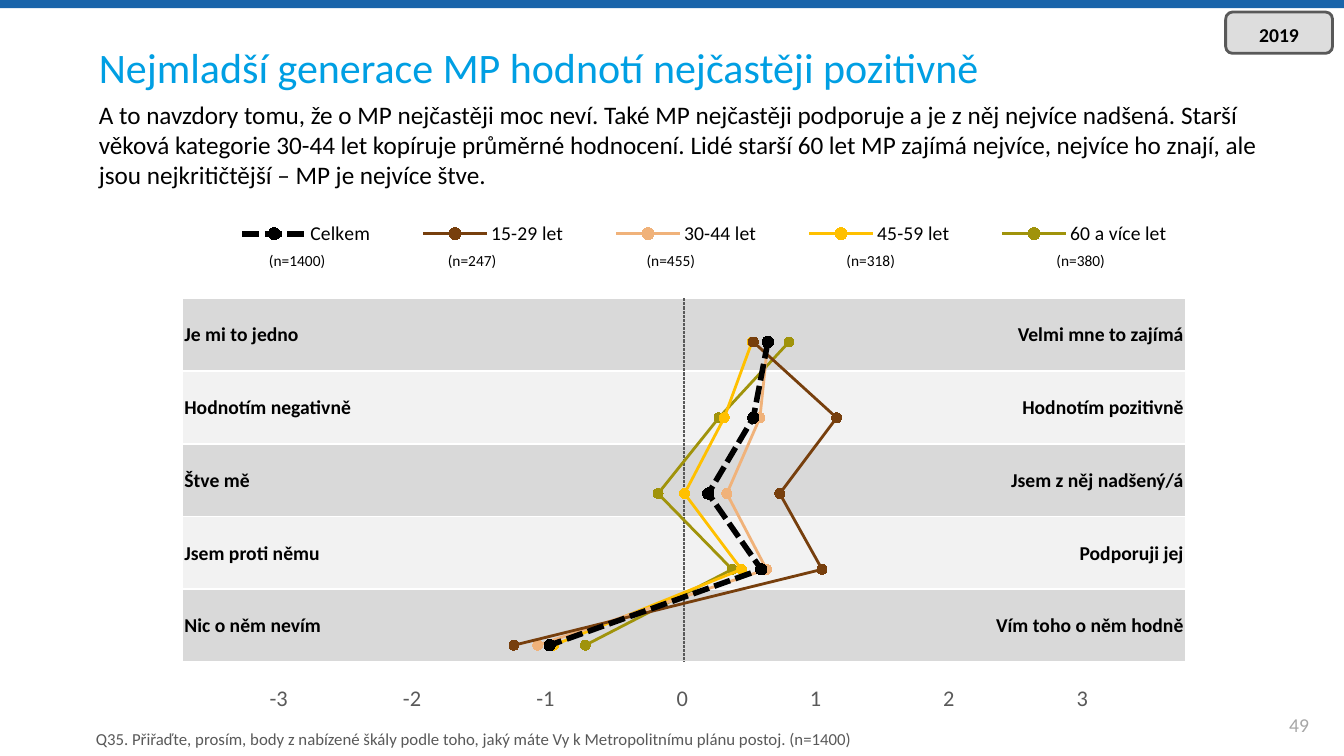
from lxml import etree
from pptx import Presentation
from pptx.chart.data import XyChartData
from pptx.dml.color import RGBColor
from pptx.enum.chart import XL_CHART_TYPE, XL_LEGEND_POSITION, XL_MARKER_STYLE
from pptx.enum.dml import MSO_LINE
from pptx.enum.shapes import MSO_CONNECTOR, MSO_SHAPE
from pptx.enum.text import MSO_ANCHOR, MSO_AUTO_SIZE, PP_ALIGN
from pptx.oxml.ns import qn
from pptx.util import Pt

FONT = "Calibri"
NO_TABLE_STYLE = "{2D5ABB26-0587-4C30-8999-92F81FD0307C}"
BLACK = RGBColor(0x00, 0x00, 0x00)
WHITE = RGBColor(0xFF, 0xFF, 0xFF)
BAR_BLUE = RGBColor(0x19, 0x64, 0xAA)
TITLE_BLUE = RGBColor(0x00, 0x9F, 0xE3)
DARK_GREY = RGBColor(0x59, 0x59, 0x59)
PAGE_GREY = RGBColor(0xA6, 0xA6, 0xA6)
BAND_DARK = RGBColor(0xD9, 0xD9, 0xD9)
BAND_LIGHT = RGBColor(0xF2, 0xF2, 0xF2)
BROWN = RGBColor(0x77, 0x3F, 0x0D)
PEACH = RGBColor(0xF0, 0xB2, 0x7A)
AMBER = RGBColor(0xFF, 0xC0, 0x00)
OLIVE = RGBColor(0xA0, 0x93, 0x0B)

TITLE = "Nejmladší generace MP hodnotí nejčastěji pozitivně"
COMMENTARY = (
    "A to navzdory tomu, že o MP nejčastěji moc neví. Také MP nejčastěji podporuje "
    "a je z něj nejvíce nadšená. Starší věková kategorie 30-44 let kopíruje průměrné "
    "hodnocení. Lidé starší 60 let MP zajímá nejvíce, nejvíce ho znají, ale jsou "
    "nejkritičtější – MP je nejvíce štve.")
QUESTION = ("Q35. Přiřaďte, prosím, body z nabízené škály podle toho, jaký máte Vy "
            "k Metropolitnímu plánu postoj. (n=1400)")
ATTITUDES = [
    ("Je mi to jedno", "Velmi mne to zajímá"),
    ("Hodnotím negativně", "Hodnotím pozitivně"),
    ("Štve mě", "Jsem z něj nadšený/á"),
    ("Jsem proti němu", "Podporuji jej"),
    ("Nic o něm nevím", "Vím toho o něm hodně"),
]
SCALE = [str(step) for step in range(-3, 4)]
SAMPLE_SIZES = ["(n=1400)", "(n=247)", "(n=455)", "(n=318)", "(n=380)"]
SAMPLE_WIDTHS = [91.5, 158.5, 125.5, 160, 140]
# Name, colour, line width, marker size, mean scores from first to last attitude
AGE_GROUPS = [
    ("Celkem", BLACK, 4, 8, [0.64, 0.53, 0.19, 0.59, -1.01]),
    ("15-29 let", BROWN, 2, 7, [0.53, 1.16, 0.73, 1.05, -1.28]),
    ("30-44 let", PEACH, 2, 7, [0.64, 0.58, 0.33, 0.63, -1.1]),
    ("45-59 let", AMBER, 2, 7, [0.52, 0.31, 0.01, 0.44, -0.98]),
    ("60 a více let", OLIVE, 2, 7, [0.8, 0.27, -0.19, 0.37, -0.74]),
]


def style_font(font, size, color, bold=False):
    font.name, font.size, font.bold = FONT, Pt(size), bold
    font.color.rgb = color


def write(frame, text, size, color, bold=False, align=PP_ALIGN.LEFT):
    paragraph = frame.paragraphs[0]
    paragraph.alignment = align
    paragraph.space_before = Pt(0)
    run = paragraph.add_run()
    run.text = text
    style_font(run.font, size, color, bold)


def set_frame(frame, anchor, left=0, right=0):
    frame.word_wrap = True
    frame.auto_size = MSO_AUTO_SIZE.NONE
    frame.vertical_anchor = anchor
    frame.margin_left, frame.margin_right = Pt(left), Pt(right)
    frame.margin_top = frame.margin_bottom = Pt(0)


def place(shape, left, top, width, height):
    shape.left, shape.top = Pt(left), Pt(top)
    shape.width, shape.height = Pt(width), Pt(height)


def add_label(slide, box, text, size, color, align=PP_ALIGN.LEFT):
    label = slide.shapes.add_textbox(*map(Pt, box))
    set_frame(label.text_frame, MSO_ANCHOR.MIDDLE)
    write(label.text_frame, text, size, color, align=align)


def add_plain_table(slide, left, top, widths, heights):
    frame = slide.shapes.add_table(len(heights), len(widths), Pt(left), Pt(top),
                                   Pt(sum(widths)), Pt(sum(heights)))
    table = frame.table
    table.first_row = table.horz_banding = False
    table._tbl.tblPr.find(qn("a:tableStyleId")).text = NO_TABLE_STYLE
    for column, width in zip(table.columns, widths):
        column.width = Pt(width)
    for row, height in zip(table.rows, heights):
        row.height = Pt(height)
    return table


def fill_cell(cell, text, size, color, align, anchor, bold=False):
    cell.margin_left = cell.margin_right = cell.margin_top = Pt(0.72)
    cell.margin_bottom = Pt(0)
    cell.vertical_anchor = anchor
    cell.fill.background()
    write(cell.text_frame, text, size, color, bold, align)


def add_row_rules(cell):
    properties = cell._tc.get_or_add_tcPr()
    for position, side in enumerate(("a:lnT", "a:lnB")):
        rule = etree.Element(qn(side), w=str(Pt(1.5)))
        fill = etree.SubElement(rule, qn("a:solidFill"))
        etree.SubElement(fill, qn("a:srgbClr"), val=str(WHITE))
        properties.insert(position, rule)


def add_attitudes(slide):
    table = add_plain_table(slide, 131, 213, [357.6] * 2, [52] * 5)
    for row, pair in enumerate(ATTITUDES):
        for column, attitude in enumerate(pair):
            cell = table.cell(row, column)
            align = PP_ALIGN.RIGHT if column else PP_ALIGN.LEFT
            fill_cell(cell, attitude, 14, BLACK, align, MSO_ANCHOR.MIDDLE, True)
            cell.fill.solid()
            cell.fill.fore_color.rgb = BAND_LIGHT if row % 2 else BAND_DARK
            add_row_rules(cell)


def add_row_of_values(slide, left, top, widths, height, values, size, color, align):
    table = add_plain_table(slide, left, top, widths, [height])
    for column, value in enumerate(values):
        fill_cell(table.cell(0, column), value, size, color, align, MSO_ANCHOR.BOTTOM)


def add_zero_line(slide):
    zero_line = slide.shapes.add_connector(
        MSO_CONNECTOR.STRAIGHT, Pt(488.6), Pt(213), Pt(488.6), Pt(473))
    zero_line.line.color.rgb = DARK_GREY
    zero_line.line.width = Pt(0.75)
    zero_line.line.dash_style = MSO_LINE.SQUARE_DOT
    etree.SubElement(zero_line._element.spPr, qn("a:effectLst"))


def add_year_badge(slide):
    badge = slide.shapes.add_shape(
        MSO_SHAPE.ROUNDED_RECTANGLE, Pt(875.5), Pt(8.6), Pt(76.3), Pt(29.5))
    badge.shadow.inherit = False
    badge.fill.solid()
    badge.fill.fore_color.rgb = DARK_GREY
    tint = badge._element.spPr.find(qn("a:solidFill")).find(qn("a:srgbClr"))
    etree.SubElement(tint, qn("a:alpha"), val="20000")
    badge.line.color.rgb = DARK_GREY
    badge.line.width = Pt(2)
    set_frame(badge.text_frame, MSO_ANCHOR.MIDDLE)
    badge.text_frame.margin_top = Pt(3)
    write(badge.text_frame, "2019", 14, BLACK, True, PP_ALIGN.CENTER)


def manual_layout(x, y, w, h, inner=False):
    layout = etree.Element(qn("c:layout"))
    manual = etree.SubElement(layout, qn("c:manualLayout"))
    settings = [("layoutTarget", "inner")] if inner else []
    settings += [("xMode", "edge"), ("yMode", "edge"),
                 ("x", x), ("y", y), ("w", w), ("h", h)]
    for tag, value in settings:
        etree.SubElement(manual, qn("c:" + tag), val=str(value))
    return layout


def drop_layout(element):
    for layout in element.findall(qn("c:layout")):
        element.remove(layout)


def add_profile_chart(slide):
    data = XyChartData()
    for name, _, _, _, scores in AGE_GROUPS:
        group = data.add_series(name)
        for row, score in enumerate(scores):
            group.add_data_point(score, 20 * (row + 1))
    chart = slide.shapes.add_chart(XL_CHART_TYPE.XY_SCATTER_LINES, Pt(32.4), Pt(134),
                                   Pt(897), Pt(366.5), data).chart
    chart.has_title = False
    style_font(chart.font, 18, BLACK)
    chart.plots[0].vary_by_categories = False

    # Hidden axes, first attitude at the top
    for axis, low, high, step in ((chart.category_axis, -3, 3, 1),
                                  (chart.value_axis, 10, 110, 20)):
        axis.minimum_scale, axis.maximum_scale, axis.major_unit = low, high, step
        axis.has_major_gridlines = False
        axis.visible = False
    chart.value_axis.reverse_order = True

    # One profile line per age group
    for profile, (_, color, width, marker_size, _) in zip(chart.plots[0].series, AGE_GROUPS):
        profile.smooth = False
        profile.format.line.color.rgb = color
        profile.format.line.width = Pt(width)
        profile.marker.style = XL_MARKER_STYLE.CIRCLE
        profile.marker.size = marker_size
        profile.marker.format.fill.solid()
        profile.marker.format.fill.fore_color.rgb = color
        profile.marker.format.line.color.rgb = color
    chart.plots[0].series[0].format.line.dash_style = MSO_LINE.SQUARE_DOT

    # Legend in one row above the plot
    chart.has_legend = True
    chart.legend.position = XL_LEGEND_POSITION.LEFT
    chart.legend.include_in_layout = False
    style_font(chart.legend.font, 14, BLACK)
    legend = chart.legend._element
    drop_layout(legend)
    legend.find(qn("c:legendPos")).addnext(manual_layout(0.12, 0.05, 0.81, 0.08))
    plot_area = chart._chartSpace.chart.plotArea
    drop_layout(plot_area)
    plot_area.insert(0, manual_layout(0.192, 0.227, 0.632, 0.739, inner=True))


def main():
    prs = Presentation()
    prs.slide_width, prs.slide_height = Pt(960), Pt(540)
    slide = prs.slides.add_slide(prs.slide_layouts[1])

    # Top bar
    bar = slide.shapes.add_shape(MSO_SHAPE.RECTANGLE, 0, 0, Pt(960), Pt(5.8))
    bar.shadow.inherit = False
    bar.fill.solid()
    bar.fill.fore_color.rgb = BAR_BLUE
    bar.line.fill.background()

    # Title and commentary
    title, commentary = slide.shapes.title, slide.placeholders[1]
    place(title, 0, 24, 960, 48)
    set_frame(title.text_frame, MSO_ANCHOR.MIDDLE, left=70.6)
    write(title.text_frame, TITLE, 30, TITLE_BLUE)
    place(commentary, 0, 70.6, 972, 65)
    set_frame(commentary.text_frame, MSO_ANCHOR.TOP, left=70.6, right=70.6)
    bullet_free = commentary.text_frame.paragraphs[0]._p.get_or_add_pPr()
    bullet_free.set("marL", "0")
    bullet_free.set("indent", "0")
    etree.SubElement(bullet_free, qn("a:buNone"))
    write(commentary.text_frame, COMMENTARY, 18, BLACK)

    # Attitude bands, scale and sample sizes
    add_attitudes(slide)
    add_row_of_values(slide, 111, 489, [95.25] * 7, 20, SCALE, 16, DARK_GREY, PP_ALIGN.RIGHT)
    add_row_of_values(slide, 166.5, 176.5, SAMPLE_WIDTHS, 17, SAMPLE_SIZES, 11, BLACK,
                      PP_ALIGN.CENTER)
    add_zero_line(slide)

    # Badge, footnote and page number
    add_year_badge(slide)
    add_label(slide, (68.4, 516, 724, 24), QUESTION, 12, DARK_GREY)
    add_label(slide, (896, 503, 64, 29), "49", 14, PAGE_GREY, PP_ALIGN.CENTER)

    add_profile_chart(slide)
    prs.save("out.pptx")


if __name__ == "__main__":
    main()
